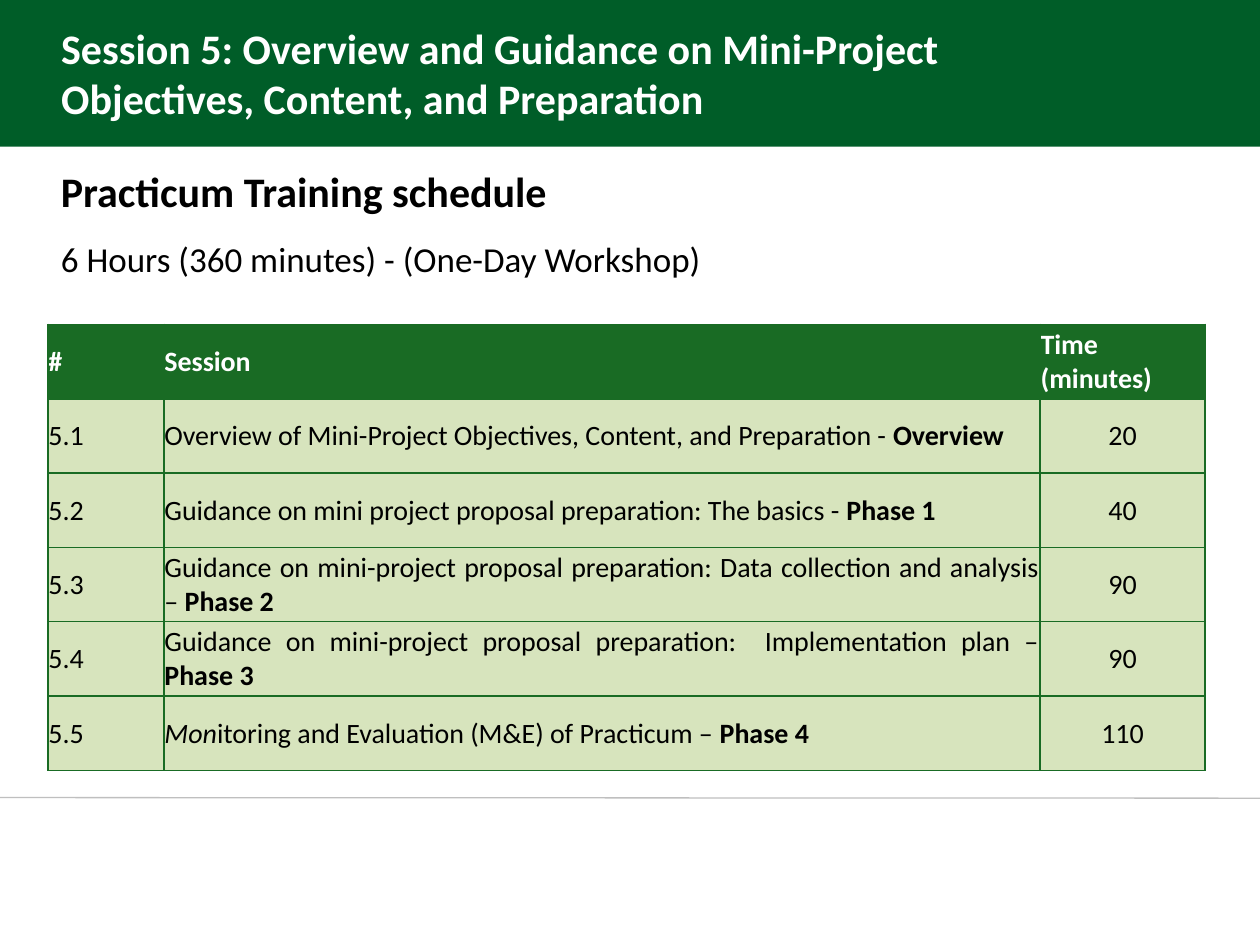
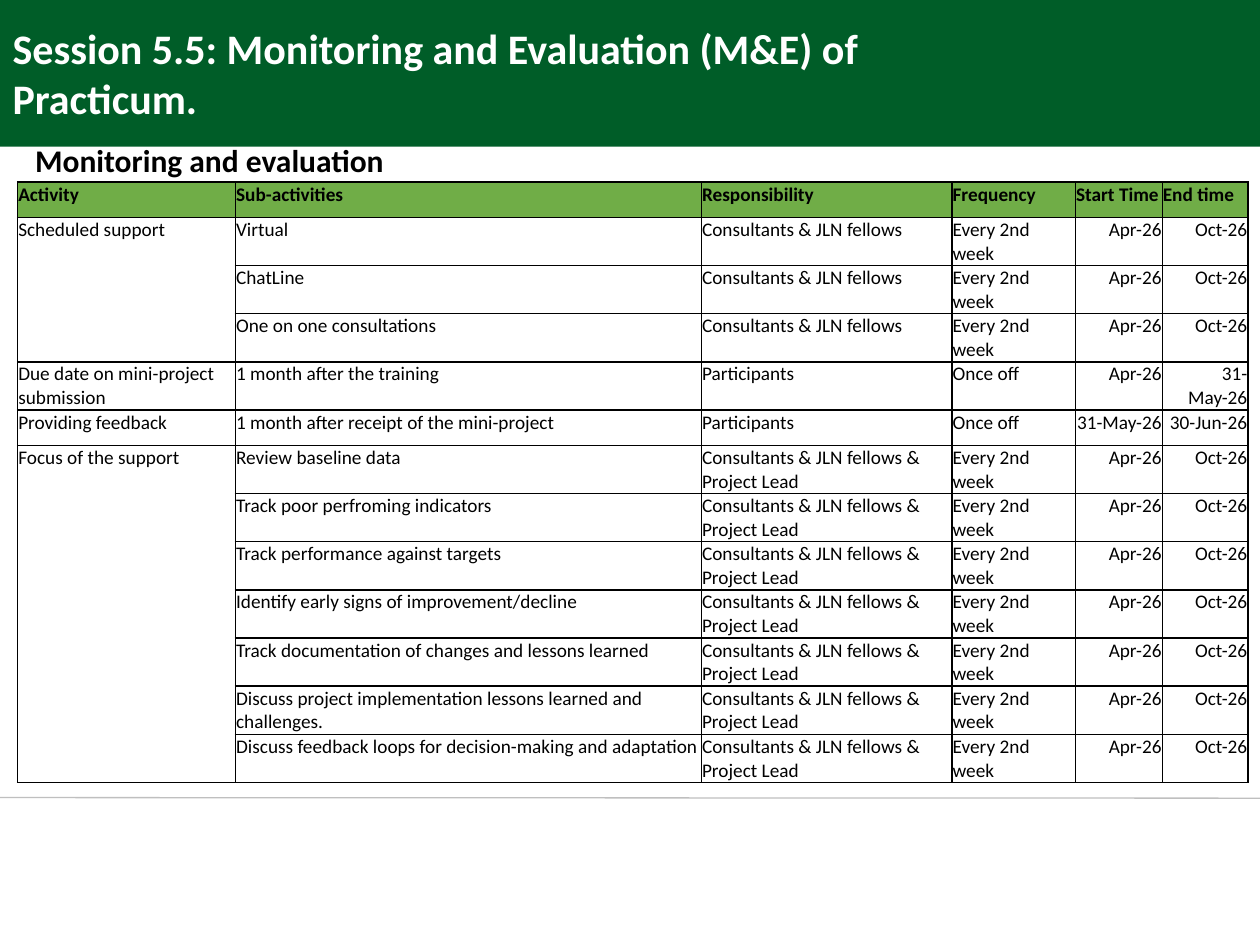
from pptx import Presentation
from pptx.dml.color import RGBColor
from pptx.enum.shapes import MSO_CONNECTOR, MSO_SHAPE
from pptx.enum.text import MSO_ANCHOR as Anchor, MSO_AUTO_SIZE as AutoSize, PP_ALIGN as Align
from pptx.oxml.ns import qn
from pptx.util import Inches, Pt
from lxml.etree import SubElement

SLIDE_WIDTH, SLIDE_HEIGHT = Inches(10), Inches(7.5)
COLUMNS, ROWS = 100, 75
FONT = "Calibri"
CELL_MARGIN = Pt(0.36)
COLORS = {
    "band": "005D28",
    "rule": "BFBFBF",
    "schedule": "196B24",
    "schedule_row": "D7E4BD",
    "plan_header": "70AD47",
    "white": "FFFFFF",
    "black": "000000",
}

SCHEDULE_HEADER = ["#", "Session", "Time (minutes)"]
# Each session: number, runs as (text, style), minutes
SCHEDULE = [
    ("5.1", [("Overview of Mini-Project Objectives, Content, and Preparation - ", ""),
             ("Overview", "bold")], "20"),
    ("5.2", [("Guidance on mini project proposal preparation: The basics - ", ""),
             ("Phase 1", "bold")], "40"),
    ("5.3", [("Guidance on mini-project proposal preparation: Data collection and analysis – ", ""),
             ("Phase 2", "bold")], "90"),
    ("5.4", [("Guidance on mini-project proposal preparation:  Implementation plan – ", ""),
             ("Phase 3", "bold")], "90"),
    ("5.5", [("Mon", "italic"), ("itoring and Evaluation (M&E) of Practicum – ", ""),
             ("Phase 4", "bold")], "110"),
]

PLAN_HEADER = ["Activity", "Sub-activities", "Responsibility", "Frequency", "Start Time", "End time"]
FELLOWS = "Consultants & JLN fellows"
FORTNIGHTLY = ("Every 2nd week", "Apr-26", "Oct-26")
# Each activity: name, responsibility, (frequency, start, end), sub-activities
PLAN = [
    ("Scheduled support", FELLOWS, FORTNIGHTLY,
     ["Virtual", "ChatLine", "One on one consultations"]),
    ("Due date on mini-project submission", "Participants", ("Once off", "Apr-26", "31-May-26"),
     ["1 month after the training"]),
    ("Providing feedback", "Participants", ("Once off", "31-May-26", "30-Jun-26"),
     ["1 month after receipt of the mini-project"]),
    ("Focus of the support", FELLOWS + " & Project Lead", FORTNIGHTLY,
     ["Review baseline data",
      "Track poor perfroming indicators",
      "Track performance against targets",
      "Identify early signs of improvement/decline",
      "Track documentation of changes and lessons learned",
      "Discuss project implementation lessons learned and challenges.",
      "Discuss feedback loops for decision-making and adaptation"]),
]


def color(name):
    return RGBColor.from_string(COLORS[name])


def grid(left, top, width, height):
    """Turn grid columns and rows into slide lengths."""
    across, down = SLIDE_WIDTH / COLUMNS, SLIDE_HEIGHT / ROWS
    return [round(n * unit) for n, unit in
            ((left, across), (top, down), (width, across), (height, down))]


def write(paragraph, runs, size, font_color, bold=False, align=Align.LEFT):
    """Fill a paragraph from a string or from (text, style) runs."""
    paragraph.alignment = align
    for text, style in [(runs, "")] if isinstance(runs, str) else runs:
        run = paragraph.add_run()
        run.text = text
        run.font.name = FONT
        run.font.size = Pt(size)
        run.font.color.rgb = color(font_color)
        run.font.bold = bold or style == "bold"
        run.font.italic = style == "italic"


def add_text(slide, box, text, size, bold=False):
    frame = slide.shapes.add_textbox(*grid(*box)).text_frame
    frame.word_wrap = True
    write(frame.paragraphs[0], text, size, "black", bold)


def add_titled_slide(presentation, title, box):
    """Add a slide with the green band, the lower rule and a title."""
    slide = presentation.slides.add_slide(presentation.slide_layouts[5])
    band = slide.shapes.add_shape(MSO_SHAPE.RECTANGLE, *grid(0, 0, COLUMNS, 11.65))
    band.shadow.inherit = False
    band.fill.solid()
    band.fill.fore_color.rgb = color("band")
    band.line.fill.background()

    rule = slide.shapes.add_connector(MSO_CONNECTOR.STRAIGHT, *grid(0, 63.3, COLUMNS, 63.35))
    rule.line.color.rgb = color("rule")
    rule.line.width = Pt(0.75)
    SubElement(rule.element.spPr, qn("a:effectLst"))

    heading = slide.shapes.title
    for part in (band, rule):
        heading.element.addprevious(part.element)
    heading.left, heading.top, heading.width, heading.height = grid(*box)
    frame = heading.text_frame
    frame.word_wrap = True
    frame.auto_size = AutoSize.NONE
    frame.vertical_anchor = Anchor.TOP
    write(frame.paragraphs[0], title, 24, "white", bold=True)
    return slide


def add_grid_table(slide, box, shares, row_count, row_height):
    """Add a plain table; shares split its width, row_height is in grid rows."""
    left, top, width, height = grid(*box[:3], row_count * row_height)
    table = slide.shapes.add_table(row_count, len(shares), left, top, width, height).table
    table.first_row = table.horz_banding = False
    for column, share in zip(table.columns, shares):
        column.width = round(width * share / sum(shares))
    return table


def format_cell(cell, border, fill=None, anchor=Anchor.TOP):
    cell.margin_left = cell.margin_right = cell.margin_top = CELL_MARGIN
    cell.margin_bottom = 0
    cell.vertical_anchor = anchor
    properties = cell._tc.get_or_add_tcPr()
    for side in ("lnL", "lnR", "lnT", "lnB"):
        line = SubElement(properties, qn(f"a:{side}"), w=str(Pt(1)))
        SubElement(SubElement(line, qn("a:solidFill")), qn("a:srgbClr"), val=COLORS[border])
    if fill:
        cell.fill.solid()
        cell.fill.fore_color.rgb = color(fill)
    else:
        cell.fill.background()


def add_schedule(slide, box):
    table = add_grid_table(slide, box, [0.92, 6.95, 1.31], len(SCHEDULE) + 1, 5.9)
    for row, texts in enumerate([SCHEDULE_HEADER, *SCHEDULE]):
        is_header = row == 0
        side = Align.LEFT if row < 2 else Align.JUSTIFY
        aligns = [side, side, Align.LEFT if is_header else Align.CENTER]
        for column, (text, align) in enumerate(zip(texts, aligns)):
            cell = table.cell(row, column)
            format_cell(cell, "schedule", "schedule" if is_header else "schedule_row", Anchor.MIDDLE)
            write(cell.text_frame.paragraphs[0], text, 16,
                  "white" if is_header else "black", is_header, align)


def add_support_plan(slide, box):
    """Add the plan table; rows with two lines of text grow to fit."""
    lines = [PLAN_HEADER]
    spans = []
    for activity, responsibility, timing, steps in PLAN:
        spans.append((len(lines), len(lines) + len(steps) - 1))
        for index, step in enumerate(steps):
            lines.append(["" if index else activity, step, responsibility, *timing])
    table = add_grid_table(slide, box, [1.73, 3.7, 1.99, 0.98, 0.69, 0.68], len(lines), 2.8)
    for row, texts in enumerate(lines):
        is_header = row == 0
        for column, text in enumerate(texts):
            cell = table.cell(row, column)
            format_cell(cell, "black", "plan_header" if is_header else None)
            if text:
                is_date = column > 3 and not is_header
                write(cell.text_frame.paragraphs[0], text, 11, "black", is_header,
                      Align.RIGHT if is_date else Align.LEFT)
    for first, last in spans:
        if last > first:
            table.cell(first, 0).merge(table.cell(last, 0))


def build_schedule_slide(presentation):
    slide = add_titled_slide(
        presentation,
        "Session 5: Overview and Guidance on Mini-Project Objectives, Content, and Preparation",
        (3.85, 1.25, 74, 9.1))
    add_text(slide, (3.85, 18.35, 81.3, 4), "6 Hours (360 minutes) - (One-Day Workshop)", 20)
    add_text(slide, (3.85, 12.65, 59.2, 5), "Practicum Training schedule", 24, bold=True)
    add_schedule(slide, (3.8, 25.75, 91.85, 35.4))


def build_plan_slide(presentation):
    slide = add_titled_slide(
        presentation,
        "Session 5.5: Monitoring and Evaluation (M&E) of Practicum.",
        (0, 1.25, 77.2, 13.1))
    add_support_plan(slide, (1.4, 14.45, 97.65, 47.8))
    add_text(slide, (1.8, 10.7, 50.8, 4), "Monitoring and evaluation", 18, bold=True)


def main():
    presentation = Presentation()
    presentation.slide_width, presentation.slide_height = SLIDE_WIDTH, SLIDE_HEIGHT
    build_schedule_slide(presentation)
    build_plan_slide(presentation)
    presentation.save("out.pptx")


if __name__ == "__main__":
    main()
